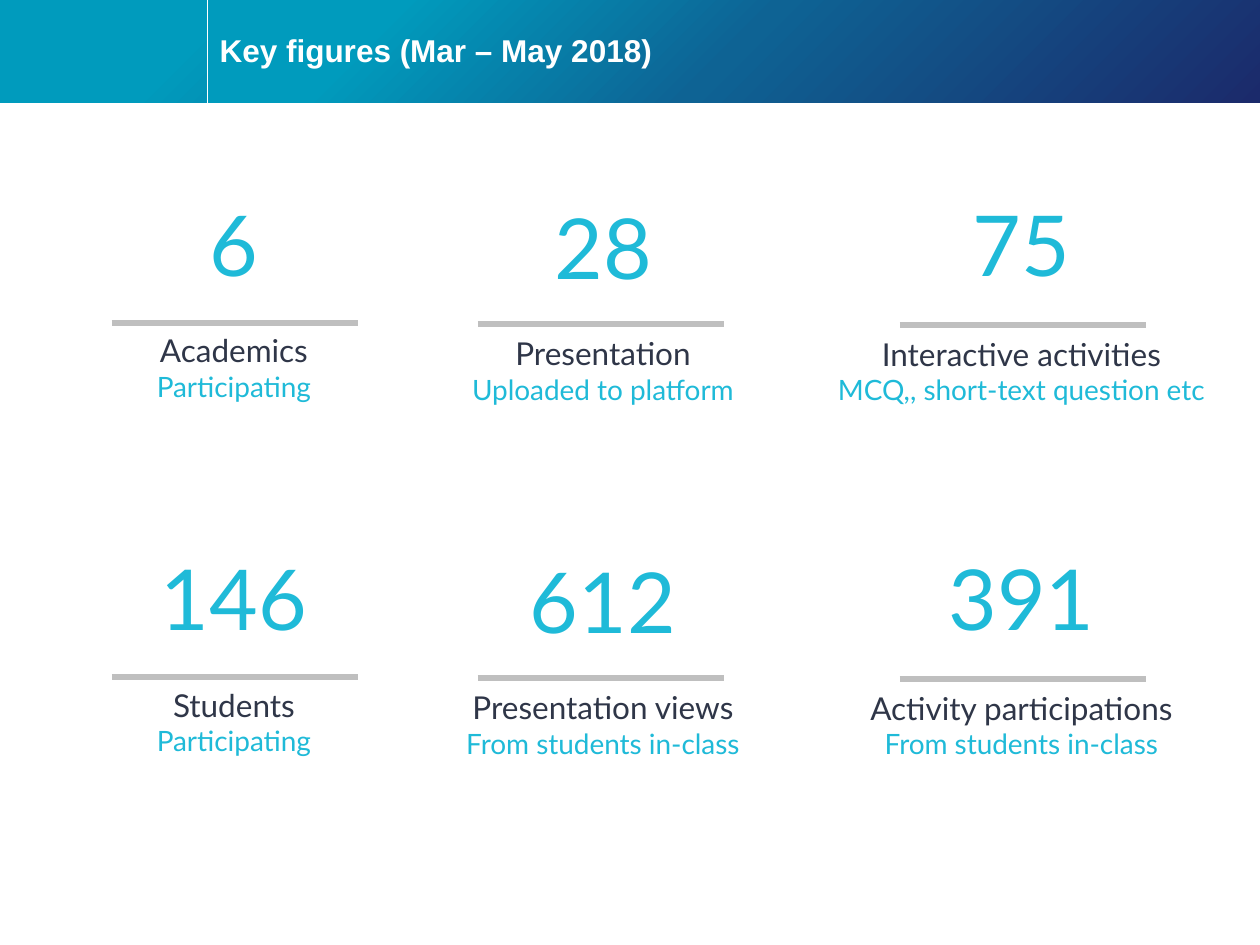
from dataclasses import dataclass

from lxml import etree
from pptx import Presentation
from pptx import util as u
from pptx.dml.color import RGBColor
from pptx.enum import shapes, text
from pptx.oxml import ns

EMU_PER_PX = 914400 // 126
ROW_PITCH = 354
BAND_HEIGHT = 103
DIVIDER_X = 207
RULE_WIDTH = 246
CYAN, INK, GREY, WHITE = "1FBAD8", "2F3648", "BFBFBF", "FFFFFF"
BAND_STOPS = ((17, "009BBD"), (50, "0E6394"), (100, "1B2A6B"))


@dataclass(frozen=True)
class Column:
    left: int
    top: int
    width: int
    rule_left: int
    rule_y: int
    gap: int


@dataclass(frozen=True)
class Figure:
    value: str
    label: str
    detail: str


COLUMNS = (
    Column(-23, 186, 514, 112, 323, 22),
    Column(346, 189, 514, 478, 324, 22),
    Column(757, 186, 529, 900, 325, 24),
)
ROWS = (
    (
        Figure("6", "Academics", "Participating"),
        Figure("28", "Presentation", "Uploaded to platform"),
        Figure("75", "Interactive activities", "MCQ,, short-text question etc"),
    ),
    (
        Figure("146", "Students", "Participating"),
        Figure("612", "Presentation views", "From students in-class"),
        Figure("391", "Activity participations", "From students in-class"),
    ),
)


def px(length: int) -> u.Emu:
    return u.Emu(length * EMU_PER_PX)


def color(value: str) -> RGBColor:
    return RGBColor.from_string(value)


def apply(target, values: dict) -> None:
    for name, value in values.items():
        setattr(target, name, value)


def style_font(font, name: str, size: int, value: str, bold: bool = False) -> None:
    apply(font, {"name": name, "size": u.Pt(size), "bold": bold})
    font.color.rgb = color(value)


def add_band(slide, left: int, width: int) -> None:
    shape = slide.shapes.add_shape(
        shapes.MSO_SHAPE.RECTANGLE, px(left), 0, px(width), px(BAND_HEIGHT))
    shape.shadow.inherit = False
    shape.line.fill.background()
    shape.fill.gradient()
    shape.fill.gradient_angle = 315
    stops = shape._element.spPr.find(ns.qn("a:gradFill")).find(ns.qn("a:gsLst"))
    for stop in list(stops):
        stops.remove(stop)
    for percent, value in BAND_STOPS:
        stop = etree.SubElement(stops, ns.qn("a:gs"), pos=str(percent * 1000))
        etree.SubElement(stop, ns.qn("a:srgbClr"), val=value)


def add_line(slide, start: tuple[int, int], end: tuple[int, int],
             value: str, weight: float) -> None:
    line = slide.shapes.add_connector(
        shapes.MSO_CONNECTOR.STRAIGHT, *(px(length) for length in start + end))
    line.line.color.rgb = color(value)
    line.line.width = u.Pt(weight)
    etree.SubElement(line._element.spPr, ns.qn("a:effectLst"))


def add_title(slide, wording: str) -> None:
    title = slide.shapes.title
    slide.shapes._spTree.append(title._element)
    apply(title, {"left": px(DIVIDER_X), "top": px(4),
                  "width": px(1052), "height": px(96)})
    frame = title.text_frame
    frame.text = wording
    apply(frame, {"word_wrap": True, "auto_size": text.MSO_AUTO_SIZE.NONE,
                  "vertical_anchor": text.MSO_ANCHOR.MIDDLE})
    paragraph = frame.paragraphs[0]
    apply(paragraph, {"alignment": text.PP_ALIGN.LEFT, "line_spacing": 0.9})
    style_font(paragraph.runs[0].font, "Arial", 18, WHITE, True)


def add_figure(slide, figure: Figure, column: Column, offset: int) -> None:
    box = slide.shapes.add_textbox(
        px(column.left), px(column.top + offset), px(column.width), px(233))
    frame = box.text_frame
    apply(frame, {"word_wrap": True,
                  "auto_size": text.MSO_AUTO_SIZE.SHAPE_TO_FIT_TEXT})
    lines = ((figure.value, 48, CYAN), (figure.label, 18, INK),
             (figure.detail, 16, CYAN))
    for index, (wording, size, value) in enumerate(lines):
        paragraph = frame.add_paragraph() if index else frame.paragraphs[0]
        paragraph.alignment = text.PP_ALIGN.CENTER
        run = paragraph.add_run()
        run.text = wording
        style_font(run.font, "Lato", size, value)
    frame.paragraphs[1].space_before = u.Pt(column.gap)
    rule_y = column.rule_y + offset
    add_line(slide, (column.rule_left, rule_y),
             (column.rule_left + RULE_WIDTH, rule_y), GREY, 3)


def main() -> None:
    presentation = Presentation()
    apply(presentation, {"slide_width": px(1260), "slide_height": px(945)})
    slide = presentation.slides.add_slide(presentation.slide_layouts[5])
    add_band(slide, 0, 1260)
    add_band(slide, DIVIDER_X, 1260 - DIVIDER_X)
    add_line(slide, (DIVIDER_X, 0), (DIVIDER_X, BAND_HEIGHT), WHITE, 0.5)
    add_title(slide, "Key figures (Mar – May 2018)")
    for row, figures in enumerate(ROWS):
        for figure, column in zip(figures, COLUMNS):
            add_figure(slide, figure, column, row * ROW_PITCH)
    presentation.save("out.pptx")


if __name__ == "__main__":
    main()
